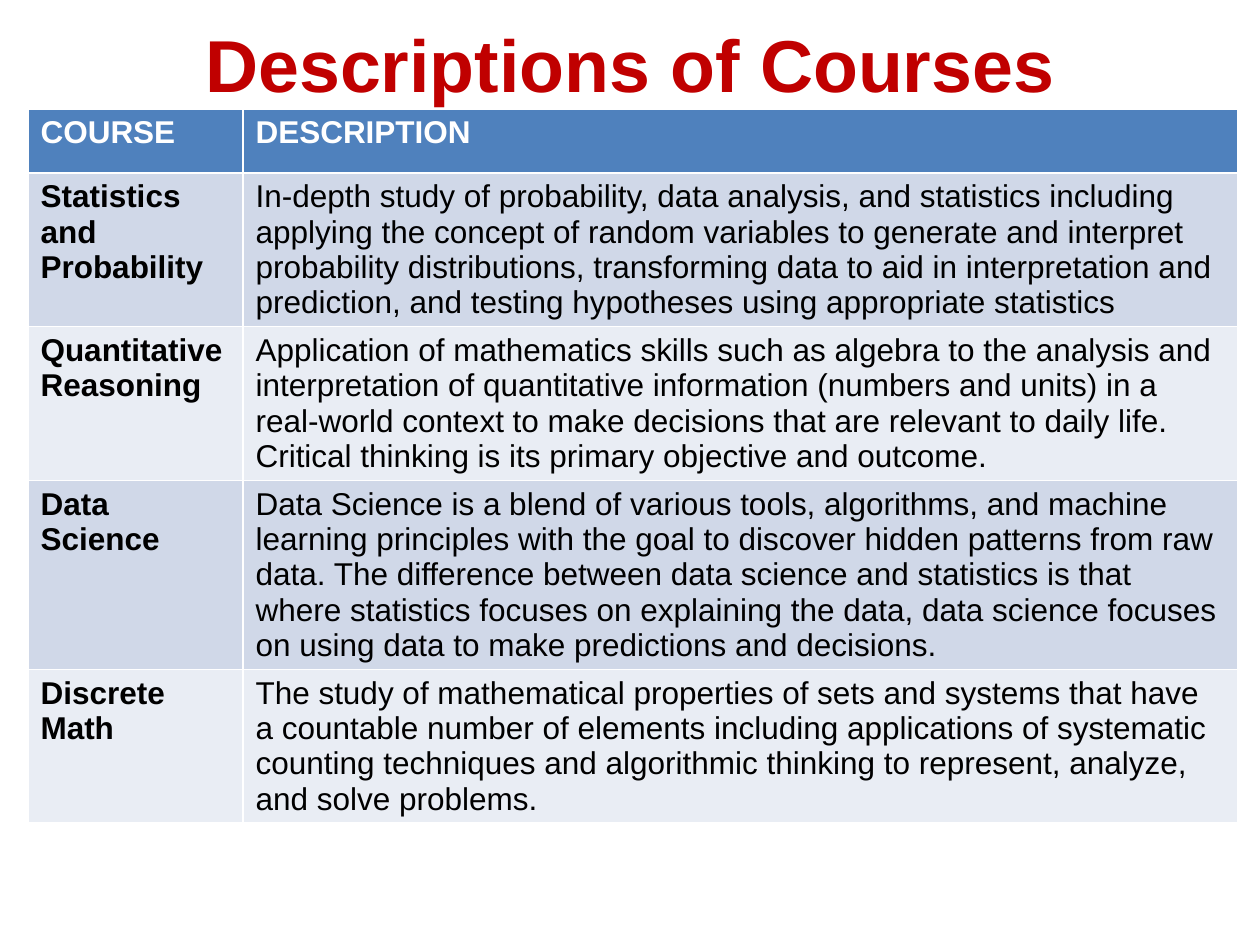
from typing import NamedTuple

from pptx import Presentation
from pptx.dml.color import RGBColor
from pptx.enum.text import MSO_ANCHOR, PP_ALIGN
from pptx.util import Emu, Pt

PX_PER_INCH = 126
FONT = "Arial"
RED = RGBColor(0xC0, 0x00, 0x00)
BLUE = RGBColor(0x4F, 0x81, 0xBD)
BANDS = (RGBColor(0xD0, 0xD8, 0xE8), RGBColor(0xE9, 0xED, 0xF4))
WHITE = RGBColor(0xFF, 0xFF, 0xFF)
BLACK = RGBColor(0x00, 0x00, 0x00)

COLUMN_WIDTHS = (215, 995)
HEADER_HEIGHT = 64
ROW_HEIGHT = 111


class Course(NamedTuple):
    name: str
    description: str


HEADER = Course("COURSE", "DESCRIPTION")
COURSES = (
    Course(
        "Statistics and Probability",
        "In-depth study of probability, data analysis, and statistics including "
        "applying the concept of random variables to generate and interpret "
        "probability distributions, transforming data to aid in interpretation "
        "and prediction, and testing hypotheses using appropriate statistics",
    ),
    Course(
        "Quantitative Reasoning",
        "Application of mathematics skills such as algebra to the analysis and "
        "interpretation of quantitative information (numbers and units) in a "
        "real-world context to make decisions that are relevant to daily life. "
        "Critical thinking is its primary objective and outcome.",
    ),
    Course(
        "Data Science",
        "Data Science is a blend of various tools, algorithms, and machine "
        "learning principles with the goal to discover hidden patterns from raw "
        "data. The difference between data science and statistics is that where "
        "statistics focuses on explaining the data, data science focuses on "
        "using data to make predictions and decisions.",
    ),
    Course(
        "Discrete Math",
        "The study of mathematical properties of sets and systems that have a "
        "countable number of elements including applications of systematic "
        "counting techniques and algorithmic thinking to represent, analyze, "
        "and solve problems.",
    ),
)


def px(n: int) -> Emu:
    return Emu(round(n * 914400 / PX_PER_INCH))


def write(tf, text: str, size: int, color: RGBColor, bold: bool) -> None:
    tf.text = text
    font = tf.paragraphs[0].runs[0].font
    font.name, font.size, font.bold = FONT, Pt(size), bold
    font.color.rgb = color


def add_title(slide, text: str) -> None:
    sp = slide.shapes.title
    sp.left, sp.top, sp.width, sp.height = px(63), px(19), px(1134), px(89)
    tf = sp.text_frame
    tf.margin_left = tf.margin_top = tf.margin_right = tf.margin_bottom = 0
    tf.vertical_anchor = MSO_ANCHOR.MIDDLE
    write(tf, text, 42, RED, True)
    tf.paragraphs[0].alignment = PP_ALIGN.CENTER


def fill_row(row, course: Course, fill: RGBColor, color: RGBColor, bolds: tuple[bool, bool]) -> None:
    for cell, text, bold in zip(row.cells, course, bolds):
        cell.fill.solid()
        cell.fill.fore_color.rgb = fill
        write(cell.text_frame, text, 18, color, bold)


def add_course_table(slide) -> None:
    height = HEADER_HEIGHT + ROW_HEIGHT * len(COURSES)
    table = slide.shapes.add_table(
        len(COURSES) + 1, 2, px(28), px(109), px(sum(COLUMN_WIDTHS)), px(height)
    ).table
    for column, width in zip(table.columns, COLUMN_WIDTHS):
        column.width = px(width)
    header, *body = table.rows
    header.height = px(HEADER_HEIGHT)
    fill_row(header, HEADER, BLUE, WHITE, (True, True))
    for i, (row, course) in enumerate(zip(body, COURSES)):
        row.height = px(ROW_HEIGHT)
        fill_row(row, course, BANDS[i % 2], BLACK, (True, False))


def main() -> None:
    prs = Presentation()
    prs.slide_width, prs.slide_height = px(1260), px(945)
    slide = prs.slides.add_slide(prs.slide_layouts[5])
    add_title(slide, "Descriptions of Courses")
    add_course_table(slide)
    prs.save("out.pptx")


if __name__ == "__main__":
    main()
